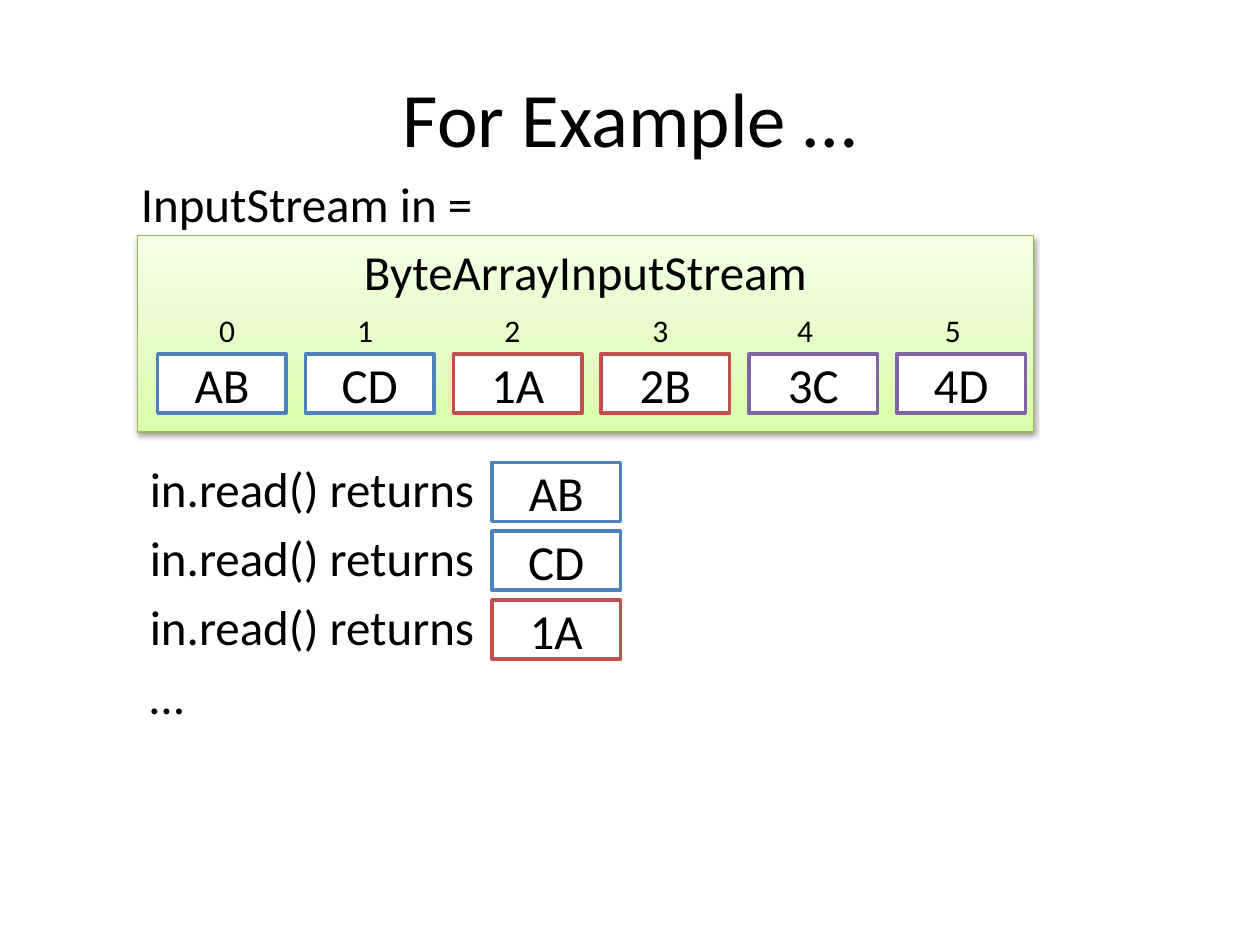
from copy import deepcopy

from lxml import etree
from pptx import Presentation
from pptx.dml.color import RGBColor
from pptx.enum.shapes import MSO_SHAPE
from pptx.enum.text import MSO_ANCHOR, PP_ALIGN
from pptx.oxml.ns import qn
from pptx.util import Cm, Pt

RECTANGLE = MSO_SHAPE.RECTANGLE
LEFT, CENTER = PP_ALIGN.LEFT, PP_ALIGN.CENTER
TOP, MIDDLE = MSO_ANCHOR.TOP, MSO_ANCHOR.MIDDLE

BLACK = RGBColor(0x00, 0x00, 0x00)
WHITE = RGBColor(0xFF, 0xFF, 0xFF)
BLUE = RGBColor(0x4F, 0x81, 0xBD)
RED = RGBColor(0xC0, 0x50, 0x4D)
PURPLE = RGBColor(0x80, 0x64, 0xA2)
GREEN = RGBColor(0x98, 0xB9, 0x55)
GREEN_STOPS = [
    (0, RGBColor(0xDA, 0xFD, 0xA7)),
    (0.35, RGBColor(0xE4, 0xFC, 0xC2)),
    (1, RGBColor(0xF5, 0xFF, 0xE7)),
]

BYTE_WIDTH, BYTE_HEIGHT = 2.59, 1.19


def write_text(shape, text, size=28, align=LEFT, anchor=TOP, wrap=True):
    frame = shape.text_frame
    frame.word_wrap = wrap
    frame.vertical_anchor = anchor
    paragraph = frame.paragraphs[0]
    paragraph.alignment = align
    run = paragraph.add_run()
    run.text = text
    run.font.name = "Calibri"
    run.font.size = Pt(size)
    run.font.color.rgb = BLACK


class SlideBuilder:
    def __init__(self, slide):
        self.slide = slide

    def text(self, text, left, top, width, height, **text_format):
        box = self.slide.shapes.add_textbox(
            Cm(left), Cm(top), Cm(width), Cm(height))
        write_text(box, text, **text_format)

    def rectangle(self, text, left, top, width, height, line_color,
                  line_width, anchor):
        shape = self.slide.shapes.add_shape(
            RECTANGLE, Cm(left), Cm(top), Cm(width), Cm(height))
        shape.shadow.inherit = False
        shape.line.color.rgb = line_color
        shape.line.width = Pt(line_width)
        write_text(shape, text, align=CENTER, anchor=anchor)
        return shape

    def byte(self, value, color, left, top):
        shape = self.rectangle(value, left, top, BYTE_WIDTH, BYTE_HEIGHT,
                               color, 2, MIDDLE)
        shape.fill.solid()
        shape.fill.fore_color.rgb = WHITE

    def panel(self, text, left, top, width, height):
        shape = self.rectangle(text, left, top, width, height, GREEN, 0.75, TOP)
        fill = shape.fill
        fill.gradient()
        fill.gradient_angle = 90
        properties = shape.element.spPr
        stop_list = properties.find(qn("a:gradFill")).find(qn("a:gsLst"))
        stop_list.insert(1, deepcopy(stop_list[0]))
        for stop, (position, color) in zip(fill.gradient_stops, GREEN_STOPS):
            stop.position = position
            stop.color.rgb = color
        # Soft shadow straight below
        shadow = etree.SubElement(
            properties.find(qn("a:effectLst")), qn("a:outerShdw"),
            blurRad=str(Pt(3.1)), dist=str(Pt(1.6)), dir="5400000",
            rotWithShape="0")
        color = etree.SubElement(shadow, qn("a:srgbClr"), val=str(BLACK))
        etree.SubElement(color, qn("a:alpha"), val="38000")


def main():
    presentation = Presentation()
    presentation.slide_width, presentation.slide_height = Cm(25.4), Cm(19.05)
    slide = presentation.slides.add_slide(presentation.slide_layouts[6])
    builder = SlideBuilder(slide)

    # Stream panel and headings
    builder.panel("ByteArrayInputStream", 2.77, 4.75, 18.06, 3.96)
    builder.text("For Example …", 1.27, 0.76, 22.86, 3.18,
                 size=44, align=CENTER, anchor=MIDDLE)
    builder.text("InputStream in =", 2.59, 3.38, 7.26, 1.45, wrap=False)

    # Bytes in the stream, with their indexes
    stream = [("AB", BLUE), ("CD", BLUE), ("1A", RED),
              ("2B", RED), ("3C", PURPLE), ("4D", PURPLE)]
    index_lefts = [4.17, 6.95, 9.92, 12.9, 15.82, 18.8]
    for index, (value, color) in enumerate(stream):
        builder.byte(value, color, 3.18 + 2.98 * index, 7.14)
        builder.text(str(index), index_lefts[index], 6.15, 0.84, 1.02,
                     size=18, wrap=False)

    # Successive reads
    row_top, row_step = 9.12, 1.39
    reads = stream[:3]
    for row, (value, color) in enumerate(reads):
        top = row_top + row_step * row
        builder.text("in.read() returns", 2.77, top, 7.37, 1.45, wrap=False)
        builder.byte(value, color, 9.92, top + 0.2)
    builder.text("…", 2.77, row_top + row_step * len(reads), 1.19, 1.45,
                 wrap=False)

    presentation.save("out.pptx")


if __name__ == "__main__":
    main()
